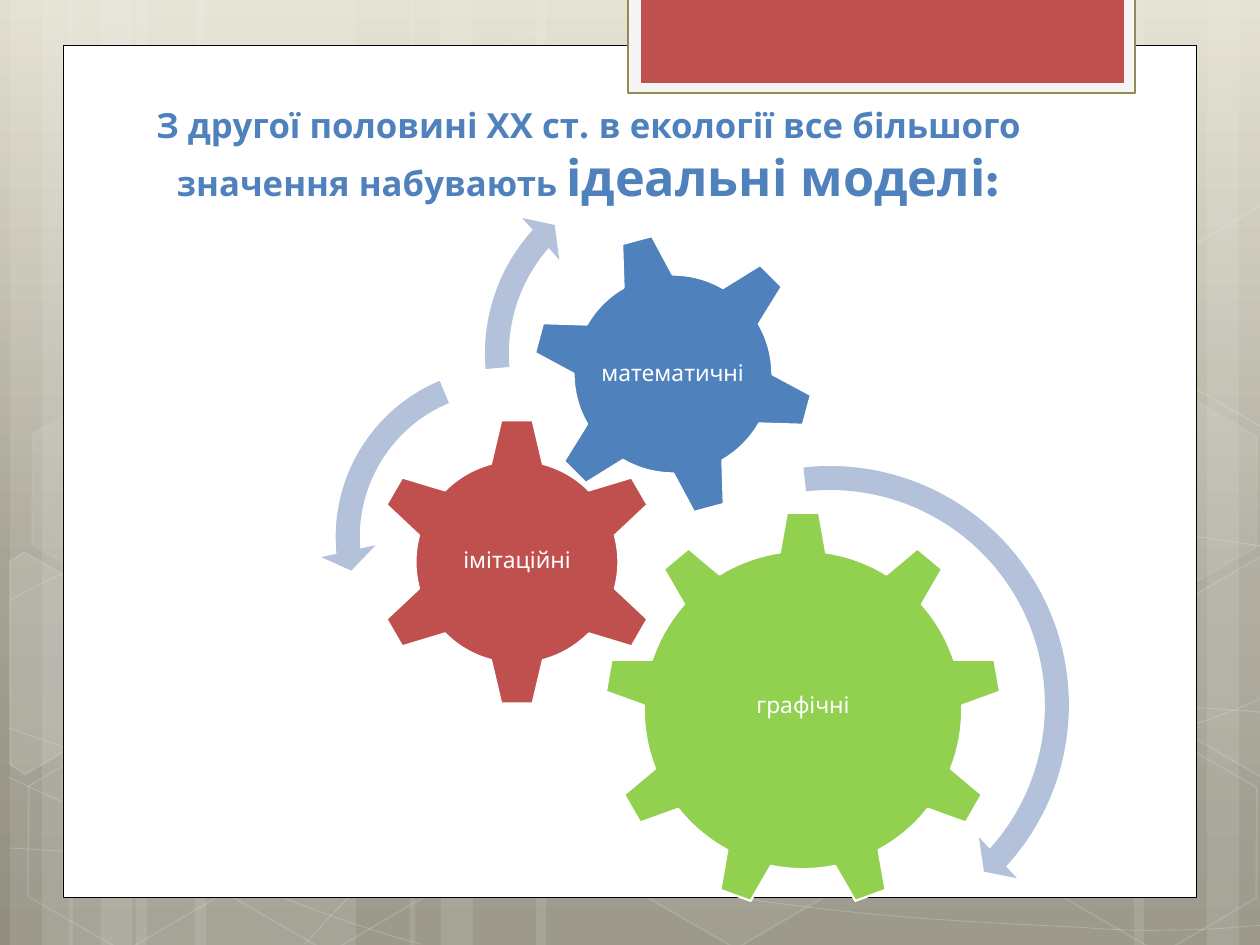
from copy import deepcopy
from math import cos, radians, sin

from lxml.etree import SubElement
from pptx import Presentation
from pptx.dml.color import RGBColor
from pptx.enum.shapes import MSO_SHAPE
from pptx.enum.text import MSO_ANCHOR, PP_ALIGN
from pptx.oxml.ns import qn
from pptx.util import Pt

PX = 914400 / 126
WIDTH, HEIGHT = 1260, 945
FONT = "League Spartan"
TILT = 30

WHITE = RGBColor(0xFF, 0xFF, 0xFF)
BLACK = RGBColor(0, 0, 0)
PAPER = RGBColor(0xF5, 0xF5, 0xF5)
OLIVE = RGBColor(0x94, 0x8A, 0x54)
RED = RGBColor(0xC0, 0x50, 0x4D)
BLUE = RGBColor(0x4F, 0x81, 0xBD)
GREEN = RGBColor(0x92, 0xD0, 0x50)
PALE_BLUE = RGBColor(0xB3, 0xC1, 0xDB)
BACKDROP = [(0, RGBColor(0xE2, 0xDF, 0xCF)),
            (0.62, RGBColor(0xA5, 0xA2, 0x93)),
            (1, RGBColor(0x92, 0x8F, 0x80))]

# left, width
STRIPES = [(136, 220), (10, 63), (42, 105), (195, 220), (69, 63), (101, 105),
           (924, 220), (1207, 63), (1134, 105), (536, 388), (410, 63), (441, 105)]

# Start point, then two control points and an end point for each segment
CURVES = [
    [(9, 848), (77, 852), (145, 856), (239, 854), (334, 853), (451, 850), (577, 838),
     (703, 825), (882, 801), (998, 777), (1113, 753), (1231, 716), (1269, 694)],
    [(9, 601), (45, 581), (82, 562), (152, 543), (224, 524), (326, 496), (437, 488),
     (549, 479), (685, 478), (824, 488), (963, 498), (1193, 537), (1269, 547)],
    [(8, 777), (160, 847), (311, 916), (421, 944)],
    [(9, 728), (48, 742), (88, 756), (161, 776), (234, 795), (344, 827), (450, 848),
     (554, 869), (687, 892), (791, 905), (896, 919), (1008, 924), (1075, 927),
     (1140, 932), (1158, 930), (1191, 930), (1223, 929), (1246, 926), (1269, 925)],
    [(305, 944), (328, 919), (350, 893), (381, 871), (411, 848), (454, 823), (489, 805),
     (524, 788), (546, 780), (592, 767), (638, 755), (722, 737), (766, 728),
     (811, 719), (818, 719), (857, 717), (896, 713), (958, 709), (1000, 708),
     (1045, 707), (1116, 708), (1116, 708), (1144, 708), (1173, 708), (1201, 708),
     (1224, 709), (1244, 711), (1256, 712), (1261, 712), (1264, 712), (1268, 713)],
]

# left, top, fill opacity, line opacity
HEXAGONS = [(421, 45, 4, 8), (626, 742, 6, 12), (14, 745, None, 12), (18, 393, 7, 8),
            (219, 746, None, 12), (1051, 747, None, 12), (1051, 396, 7, 8)]

# Hexagons cut by the slide edge: corners, pivot, fill opacity
CUT_HEXAGONS = [
    ([(10, 561), (24, 552), (121, 607), (120, 718), (25, 774), (10, 765)],
     (45, 674), 10),
    ([(1167, 611), (1261, 556), (1271, 562), (1271, 772), (1263, 777), (1167, 722)],
     (1241, 655), 4),
    ([(1167, 261), (1261, 205), (1273, 212), (1271, 422), (1263, 427), (1167, 372)],
     (1241, 304), None),
]

# kind, (left, top, size), rotation, colour, label, label box
GEARS = [
    (MSO_SHAPE.GEAR_9, (604, 511, 398), 0, GREEN, "графічні", (684, 604, 238, 205)),
    (MSO_SHAPE.GEAR_6, (372, 417, 290), 0, RED, "імітаційні", (445, 490, 144, 142)),
    (MSO_SHAPE.GEAR_6, (531, 232, 284), 345, BLUE, "математичні", (593, 295, 159, 159)),
]

# kind, (left, top, size), adjustments in thousandths
ARROWS = [
    (MSO_SHAPE.CIRCULAR_ARROW, (575, 450, 510), (47, 2990, 25368, 158175, 55)),
    (MSO_SHAPE.LEFT_CIRCULAR_ARROW, (320, 352, 370), (65, 4300, 104891, 148378, 75)),
    (MSO_SHAPE.CIRCULAR_ARROW, (469, 154, 399), (60, 3941, 133138, 105082, 70)),
]


def emu(*lengths):
    return [round(length * PX) for length in lengths]


def set_opacity(parent, percent):
    color = next(parent.iter(qn("a:srgbClr")))
    SubElement(color, qn("a:alpha")).set("val", str(percent * 1000))


def untilt(point, pivot):
    """Turn a point back by TILT about the pivot."""
    x, y = point[0] - pivot[0], point[1] - pivot[1]
    c, s = cos(radians(TILT)), sin(radians(TILT))
    return pivot[0] + x * c + y * s, pivot[1] - x * s + y * c


def bend(shape):
    """Join each three straight segments into one cubic curve."""
    lines = list(shape.element.iter(qn("a:lnTo")))
    for start in range(0, len(lines), 3):
        cubic = SubElement(lines[start].getparent(), qn("a:cubicBezTo"))
        for line in lines[start:start + 3]:
            cubic.append(line[0])
            line.getparent().remove(line)


def add_run(paragraph, text, *, size, color, bold=False):
    run = paragraph.add_run()
    run.text = text
    run.font.name = FONT
    run.font.size = Pt(size)
    run.font.bold = bold
    run.font.color.rgb = color


class SlideBuilder:
    def __init__(self, slide):
        self.slide = slide
        self.shapes = slide.shapes

    def backdrop(self, stops):
        fill = self.slide.background.fill
        fill.gradient()
        fill.gradient_angle = 270
        stop_list = next(self.slide.element.iter(qn("a:gsLst")))
        stop_list.append(deepcopy(stop_list[-1]))
        for stop, (position, color) in zip(fill.gradient_stops, stops):
            stop.position = position
            stop.color.rgb = color

    def paint(self, shape, fill=None, opacity=None, line=None, width=1, line_opacity=None):
        shape.shadow.inherit = False
        properties = shape.element.spPr
        if fill is None:
            shape.fill.background()
        else:
            shape.fill.solid()
            shape.fill.fore_color.rgb = fill
            if opacity:
                set_opacity(properties.find(qn("a:solidFill")), opacity)
        if line is None:
            shape.line.fill.background()
        else:
            shape.line.color.rgb = line
            shape.line.width = Pt(width)
            if line_opacity:
                set_opacity(properties.find(qn("a:ln")), line_opacity)

    def preset(self, kind, box, rotation=0, adjustments=(), **style):
        shape = self.shapes.add_shape(kind, *emu(*box))
        shape.rotation = rotation
        for index, value in enumerate(adjustments):
            shape.adjustments[index] = value / 1000
        self.paint(shape, **style)

    def outline(self, points, close, **style):
        builder = self.shapes.build_freeform(*points[0], scale=PX)
        builder.add_line_segments(points[1:], close=close)
        shape = builder.convert_to_shape()
        self.paint(shape, **style)
        return shape

    def text(self, box, runs, anchor=MSO_ANCHOR.MIDDLE, inset=3, spacing=0.9):
        """Centred paragraph made of (text, format) runs."""
        frame = self.shapes.add_textbox(*emu(*box)).text_frame
        frame.word_wrap = True
        frame.vertical_anchor = anchor
        (frame.margin_left, frame.margin_top,
         frame.margin_right, frame.margin_bottom) = emu(*[inset] * 4)
        paragraph = frame.paragraphs[0]
        paragraph.alignment = PP_ALIGN.CENTER
        paragraph.line_spacing = spacing
        for text, style in runs:
            add_run(paragraph, text, **style)


def main():
    presentation = Presentation()
    presentation.slide_width, presentation.slide_height = emu(WIDTH, HEIGHT)
    page = SlideBuilder(presentation.slides.add_slide(presentation.slide_layouts[6]))

    page.backdrop(BACKDROP)
    for left, width in STRIPES:
        page.preset(MSO_SHAPE.RECTANGLE, (left, 0, width, HEIGHT), fill=WHITE, opacity=10)
    for curve in CURVES:
        bend(page.outline(curve, False, line=WHITE, width=0.5, line_opacity=20))
    for left, top, opacity, line_opacity in HEXAGONS:
        page.preset(MSO_SHAPE.HEXAGON, (left, top, 220, 192), TILT, (285, 1155),
                    fill=WHITE if opacity else None, opacity=opacity,
                    line=WHITE, line_opacity=line_opacity)
    for corners, pivot, opacity in CUT_HEXAGONS:
        hexagon = page.outline([untilt(corner, pivot) for corner in corners], True,
                               fill=WHITE if opacity else None, opacity=opacity,
                               line=WHITE, line_opacity=12)
        hexagon.rotation = TILT

    page.preset(MSO_SHAPE.RECTANGLE, (63, 45, 1134, 853), fill=WHITE, line=BLACK, width=0.5)
    page.preset(MSO_SHAPE.RECTANGLE, (628, -3, 507, 96), fill=PAPER, line=OLIVE, width=1.25)
    page.preset(MSO_SHAPE.RECTANGLE, (641, -3, 483, 86), fill=RED)

    title_style = {"color": BLUE, "bold": True}
    page.text((105, 104, 967, 108), [
        ("З другої половині ХХ ст. в екології все більшого значення набувають ",
         {"size": 19.8, **title_style}),
        ("ідеальні моделі:", {"size": 28.8, **title_style}),
    ], anchor=MSO_ANCHOR.TOP, inset=0, spacing=1.0)

    for kind, (left, top, size), rotation, color, label, label_box in GEARS:
        page.preset(kind, (left, top, size, size), rotation,
                    fill=color, line=WHITE, width=1.25)
        page.text(label_box, [(label, {"size": 13, "color": WHITE})])
    for kind, (left, top, size), adjustments in ARROWS:
        page.preset(kind, (left, top, size, size), adjustments=adjustments, fill=PALE_BLUE)

    presentation.save("out.pptx")


if __name__ == "__main__":
    main()
